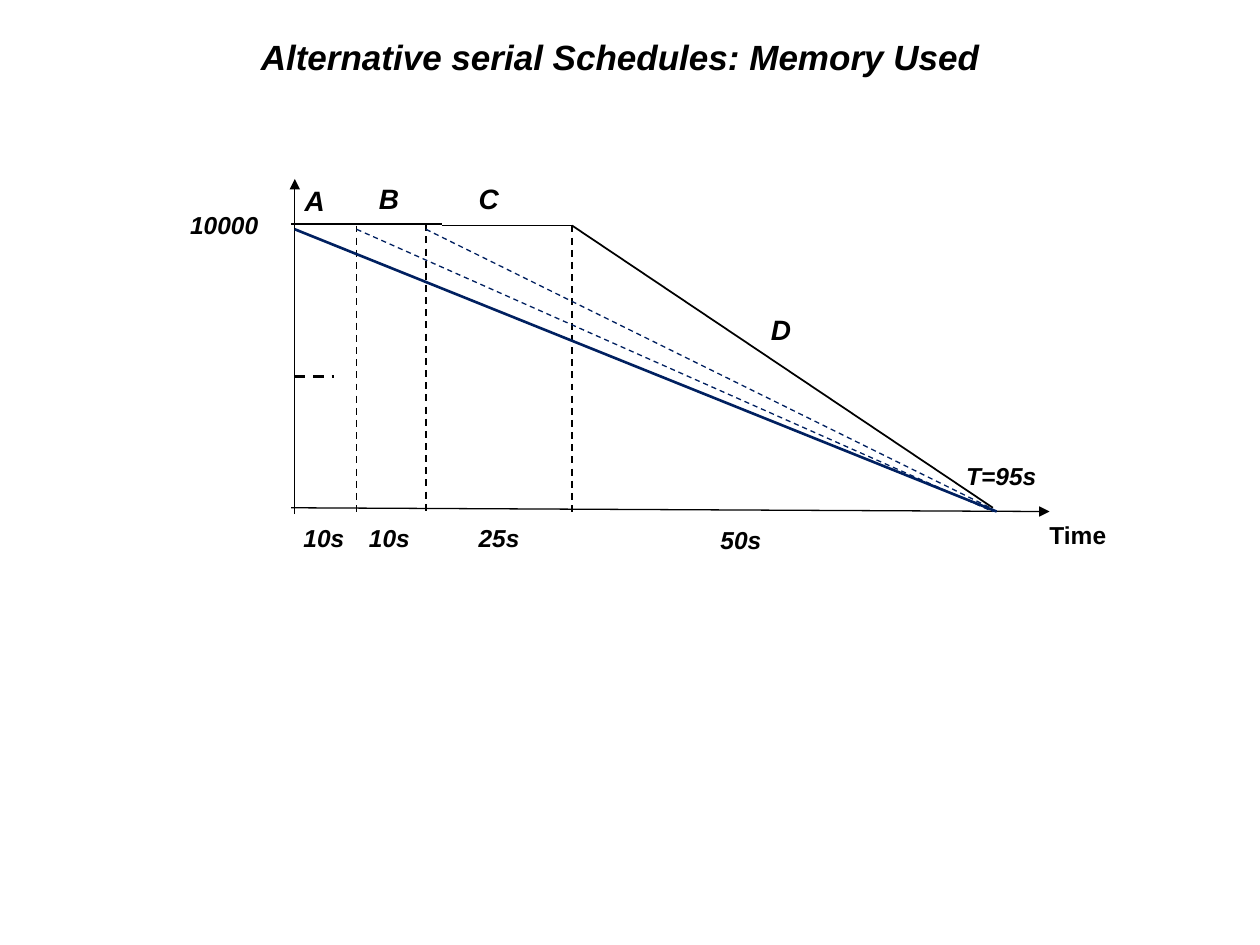
from lxml import etree
from pptx import Presentation
from pptx.dml.color import RGBColor
from pptx.enum.dml import MSO_LINE
from pptx.enum.shapes import MSO_CONNECTOR
from pptx.enum.text import MSO_ANCHOR, PP_ALIGN
from pptx.oxml.ns import qn
from pptx.util import Emu, Pt

PX = 9144
STRAIGHT = MSO_CONNECTOR.STRAIGHT
DASH = MSO_LINE.DASH
TOP = MSO_ANCHOR.TOP
LEFT = PP_ALIGN.LEFT
BLACK = "000000"
NAVY = "002060"


def px(value):
    return Emu(value * PX)


def color(value):
    return RGBColor.from_string(value)


def write_text(shape, text, size, italic=True, wrap=True):
    frame = shape.text_frame
    frame.text = text
    frame.word_wrap = wrap
    frame.vertical_anchor = TOP
    para = frame.paragraphs[0]
    para.alignment = LEFT
    span = para.runs[0]
    formats = {"name": "Arial", "size": Pt(size), "bold": True, "italic": italic}
    for name, value in formats.items():
        setattr(span.font, name, value)
    span.font.color.rgb = color(BLACK)


def add_label(page, box, text, size, italic=True, wrap=True):
    shape = page.shapes.add_textbox(*map(px, box))
    write_text(shape, text, size, italic, wrap)


def add_line(page, start, end, width=1, ink=BLACK, dashed=False, arrow=False):
    line = page.shapes.add_connector(STRAIGHT, *map(px, (*start, *end)))
    line.line.width = Pt(width)
    line.line.color.rgb = color(ink)
    if dashed:
        line.line.dash_style = DASH
    if arrow:
        outline = line.line._get_or_add_ln()
        etree.SubElement(outline, qn("a:tailEnd"), type="triangle")
    etree.SubElement(line._element.spPr, qn("a:effectLst"))


def add_title(page, box):
    title = page.shapes.title
    edges = dict(zip(("left", "top", "width", "height"), box))
    for name, value in edges.items():
        setattr(title, name, px(value))
    write_text(title, "Alternative serial Schedules: Memory Used", 20)


def add_plot(page, box):
    left, top, width, height = box

    def at(x, y):
        return left + x, top + y

    def draw(start, end, **style):
        add_line(page, at(*start), at(*end), **style)

    draw((-3, height - 3), (width, height), width=0.75, arrow=True)
    draw((0, height + 2), (0, 0), width=0.75, arrow=True)
    draw((0, 157), (31, 157), width=1.5, dashed=True)

    for start, end in [((-3, 36), (57, 36)), ((57, 36), (117, 36)),
                       ((117, 37), (220, 37)), ((220, 37), (554, 261))]:
        draw(start, end)

    for x, y in [(49, 37), (104, 36), (220, 37)]:
        draw((x, y), (x, y + 231), dashed=True)

    for x, end_y in [(104, 262), (49, 264)]:
        draw((x, 40), (554, end_y), width=0.75, ink=NAVY, dashed=True)
    draw((0, 40), (557, 264), width=1.5, ink=NAVY)

    for text, x, y in [("A", -2, -1), ("B", 57, -3), ("C", 136, -3), ("D", 368, 101)]:
        add_label(page, (*at(x, y), 66, 37), text, 16)
    for text, x, y in [("10s", -3, 268), ("10s", 49, 268), ("25s", 136, 268), ("50s", 328, 270)]:
        add_label(page, (*at(x, y), 66, 34), text, 14)
    add_label(page, (*at(-93, 20), 89, 34), "10000", 14)
    add_label(page, (*at(523, 219), 76, 34), "T=95s", 14, wrap=False)
    add_label(page, (*at(589, 266), 65, 33), "Time", 14, italic=False, wrap=False)


def main():
    deck = Presentation()
    deck.slide_width = px(1000)
    deck.slide_height = px(750)
    page = deck.slides.add_slide(deck.slide_layouts[5])
    add_title(page, (197, 23, 736, 67))
    add_plot(page, (234, 142, 599, 264))
    deck.save("out.pptx")


if __name__ == "__main__":
    main()
